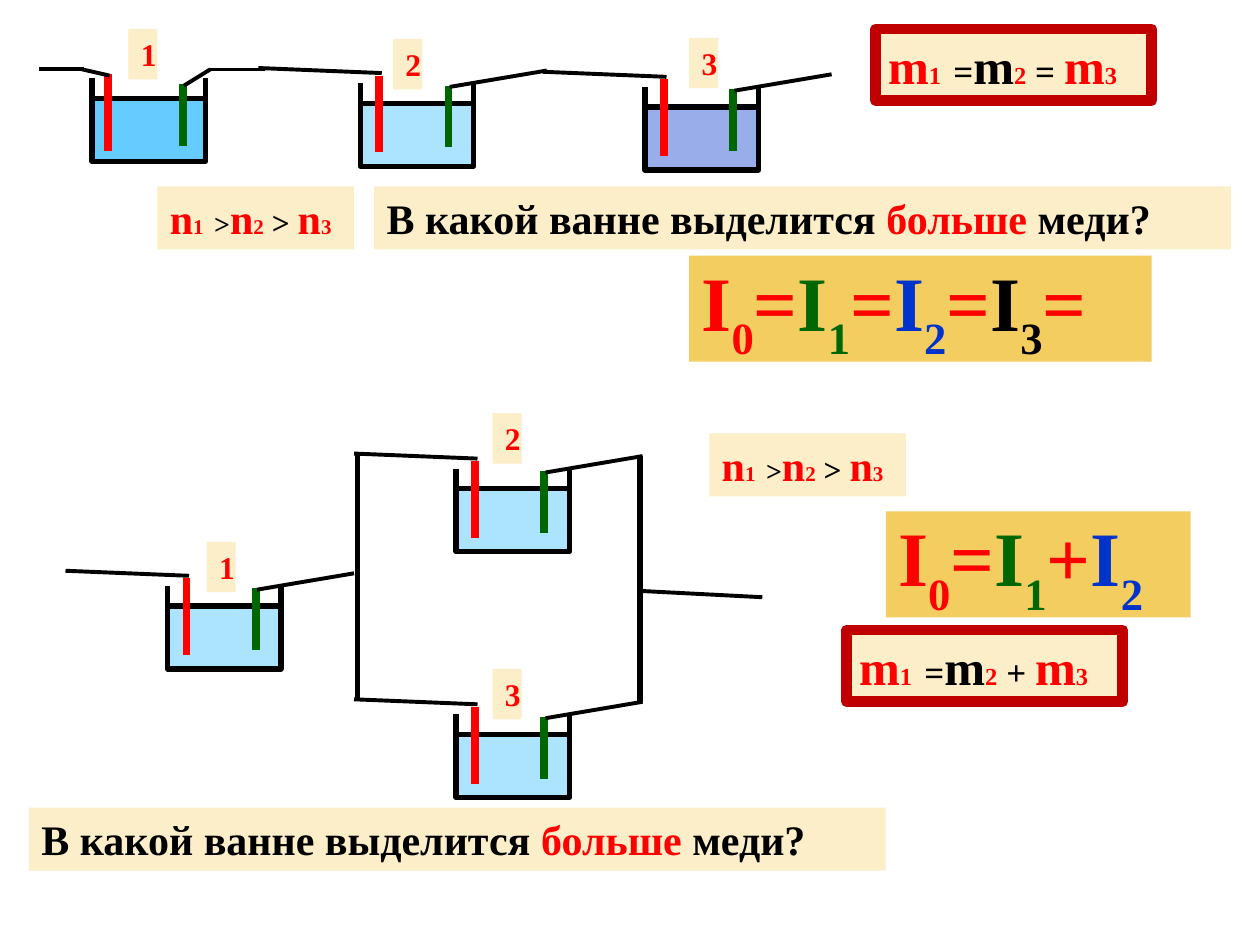
"""Build the slide on copper baths joined in series and in parallel."""
import pptx
import pptx.dml.color
import pptx.enum.shapes
import pptx.enum.text
import pptx.oxml.ns
import pptx.util
from lxml import etree

Inches = pptx.util.Inches
RED, BLACK, GREEN, BLUE = "FF0000", "000000", "006600", "0033CC"
CREAM, GOLD, SKY = "FBEEC9", "F3CD60", "66CCFF"
FONT = "Times New Roman"

WALLS = [
    (0, -0.16, 0, 0.1, BLACK, 3),
    (0.9, -0.16, 0.9, 0.1, BLACK, 3),
]
FIRST = WALLS + [
    (-0.06, -0.23, -0.42, -0.23, BLACK, 2.25),
    (1.37, -0.23, 0.94, -0.23, BLACK, 1.5),
    (0.13, -0.19, 0.13, 0.42, RED, 4.5),
    (0.14, -0.18, -0.08, -0.23, BLACK, 2.25),
    (0.72, -0.11, 0.72, 0.38, GREEN, 4.5),
    (0.73, -0.1, 0.94, -0.23, BLACK, 2.25),
]
USUAL = WALLS + [
    (0.15, -0.22, 0.15, 0.39, RED, 4.5),
    (0.17, -0.24, -0.81, -0.28, BLACK, 2.25),
    (0.7, -0.14, 0.7, 0.35, GREEN, 4.5),
    (0.71, -0.13, 1.48, -0.26, BLACK, 2.25),
]
BATHS = [
    (0.73, 0.78, SKY, 100, FIRST),
    (2.86, 0.82, SKY, 54, USUAL),
    (5.12, 0.85, BLUE, 40, USUAL),
    (1.33, 4.81, SKY, 54, USUAL),
    (3.62, 3.88, SKY, 54, USUAL),
    (3.62, 5.83, SKY, 54, USUAL),
]
WIRES = [
    (2.84, 3.6, 2.84, 5.55, BLACK, 3),
    (5.08, 3.62, 5.08, 5.57, BLACK, 3),
    (6.05, 4.74, 5.08, 4.69, BLACK, 2.25),
]
LABELS = [
    ("1", 1.02, 0.23), ("2", 3.12, 0.31), ("3", 5.47, 0.3),
    ("1", 1.64, 4.3), ("2", 3.91, 3.28), ("3", 3.91, 5.31),
]
ASK = [("В какой ванне выделится ", 24, BLACK), ("больше", 24, RED),
       (" меди?", 24, BLACK)]
ORDER = [("n", 24, RED), ("1  ", 12, RED), (">", 16, BLACK), ("n", 24, RED),
         ("2", 12, RED), (" > ", 18, BLACK), ("n", 24, RED), ("3", 12, RED)]
ASKS = [(2.97, 1.48), (0.23, 6.41)]
ORDERS = [(1.25, 1.48), (5.63, 3.44)]
MASSES = [("+", 6.72, 5), ("=", 6.95, 0.23)]
TINTS = [RED, GREEN, BLUE, BLACK]
SUMS = [("=+", 7.03, 4.06, 2.42), ("====", 5.47, 2.03, 3.67)]


def rgb(code):
    """Turn a hex string into a colour."""
    return pptx.dml.color.RGBColor.from_string(code)


def rect(shapes, box, fill, edge=None, width=0):
    """Add a plain rectangle."""
    shape = shapes.add_shape(pptx.enum.shapes.MSO_SHAPE.RECTANGLE,
                             *map(Inches, box))
    shape.shadow.inherit = False
    shape.fill.solid()
    shape.fill.fore_color.rgb = rgb(fill)
    if edge:
        shape.line.color.rgb = rgb(edge)
        shape.line.width = pptx.util.Pt(width)
    else:
        shape.line.fill.background()
    return shape


def wire(shapes, data, left=0, top=0):
    """Add a straight line, shifted by left and top."""
    x1, y1, x2, y2, tint, width = data
    line = shapes.add_connector(
        pptx.enum.shapes.MSO_CONNECTOR.STRAIGHT, Inches(left + x1),
        Inches(top + y1), Inches(left + x2), Inches(top + y2))
    line.line.color.rgb = rgb(tint)
    line.line.width = pptx.util.Pt(width)
    etree.SubElement(line._element.spPr, pptx.oxml.ns.qn("a:effectLst"))


def bath(shapes, left, top, fill, alpha, parts):
    """Add a grouped bath with its electrodes and leads."""
    group = shapes.add_group_shape().shapes
    tank = rect(group, (left, top, 0.9, 0.5), fill, BLACK, 3)
    if alpha < 100:
        tone = tank._element.spPr.find(".//" + pptx.oxml.ns.qn("a:srgbClr"))
        etree.SubElement(tone, pptx.oxml.ns.qn("a:alpha"),
                         val=str(alpha * 1000))
    for part in parts:
        wire(group, part, left, top)


def note(shapes, box, runs, fill=CREAM, edge=None, middle=False):
    """Add a filled box of text; a run may end with a True for subscript."""
    shape = rect(shapes, box, fill, edge, 6)
    frame = shape.text_frame
    frame.word_wrap = True
    frame.auto_size = pptx.enum.text.MSO_AUTO_SIZE.SHAPE_TO_FIT_TEXT
    anchor = pptx.enum.text.MSO_ANCHOR
    frame.vertical_anchor = anchor.MIDDLE if middle else anchor.TOP
    para = frame.paragraphs[0]
    para.alignment = pptx.enum.text.PP_ALIGN.LEFT
    para.font.name, para.font.bold = FONT, True
    for text, size, tint, *sub in runs:
        run = para.add_run()
        run.text = text
        run.font.size = pptx.util.Pt(size)
        run.font.color.rgb = rgb(tint)
        if sub:
            run._r.get_or_add_rPr().set("baseline", "-30000")


def mass(sign):
    """Return the runs of a mass formula."""
    return [("m", 28, RED), ("1  ", 14, RED), ("=", 20, BLACK),
            ("m", 28, BLACK), ("2", 14, RED), (f" {sign} ", 20, BLACK),
            ("m", 28, RED), ("3", 14, RED)]


def total(signs):
    """Return the runs of a current formula with the given signs."""
    runs = []
    for i, tint in enumerate(TINTS[:max(3, len(signs))]):
        runs += [("I", 44, tint), (str(i), 44, tint, True)]
        if i < len(signs):
            runs.append((signs[i], 44, RED))
    return runs


def main():
    """Build and save the slide."""
    deck = pptx.Presentation()
    deck.slide_width, deck.slide_height = Inches(10), Inches(7.5)
    shapes = deck.slides.add_slide(deck.slide_layouts[6]).shapes
    for item in BATHS:
        bath(shapes, *item)
    for item in WIRES:
        wire(shapes, item)
    for text, left, top in LABELS:
        note(shapes, (left, top, 0.23, 0.4), [(text, 18, RED)])
    for left, top in ORDERS:
        note(shapes, (left, top, 1.56, 0.5), ORDER)
    for left, top in ASKS:
        note(shapes, (left, top, 6.8, 0.5), ASK)
    for sign, left, top in MASSES:
        note(shapes, (left, top, 2.19, 0.57), mass(sign), edge="C00000")
    for signs, left, top, width in SUMS:
        note(shapes, (left, top, width, 0.84), total(signs), GOLD,
             middle=True)
    deck.save("out.pptx")


if __name__ == "__main__":
    main()
